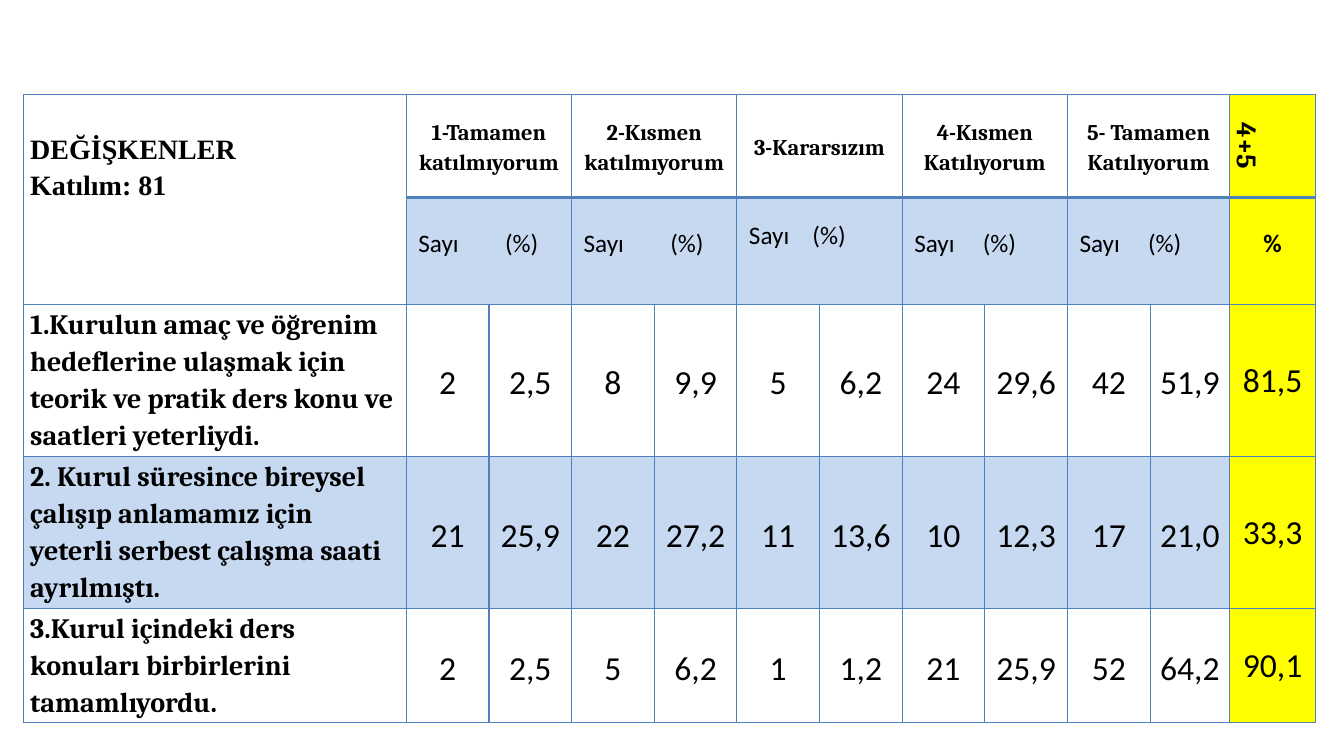
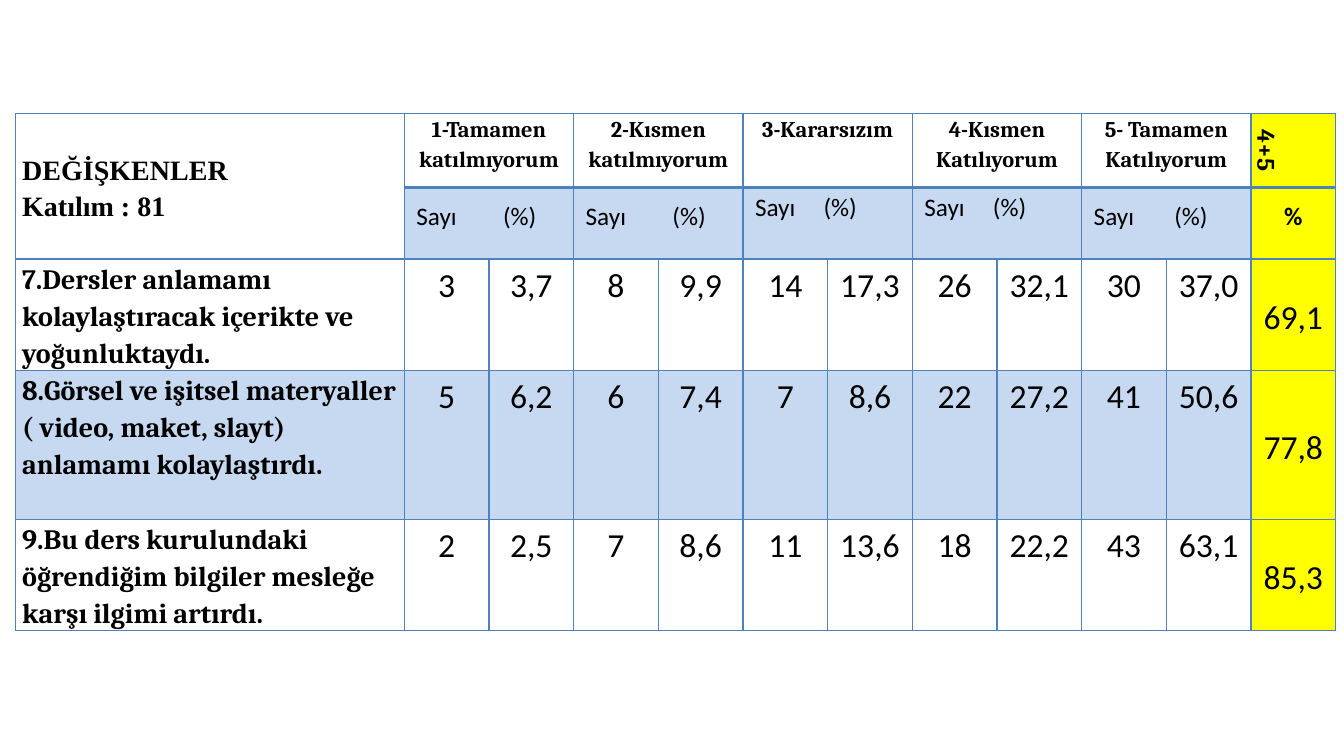
"""Build two survey result slides, each holding one table of answers."""
from lxml.etree import SubElement
from pptx import Presentation
from pptx.dml.color import RGBColor
from pptx.enum.text import MSO_ANCHOR, PP_ALIGN
from pptx.oxml import parse_xml
from pptx.oxml.ns import qn
from pptx.util import Inches, Pt

BLACK = RGBColor(0x00, 0x00, 0x00)
BORDER = RGBColor(0x4F, 0x81, 0xBD)
BAND = RGBColor(0xC6, 0xD9, 0xF1)
HIGHLIGHT = RGBColor(0xFF, 0xFF, 0x00)
NAMESPACE = "http://schemas.openxmlformats.org/drawingml/2006/main"
THIN, THICK = 1, 2.25
LOOSE = 1.15
SIDE = 0.07
TIGHT_MARGINS = (0.01, 0.01, 0.01, 0)

CHOICES = [
    "1-Tamamen katılmıyorum",
    "2-Kısmen katılmıyorum",
    "3-Kararsızım",
    "4-Kısmen Katılıyorum",
    "5- Tamamen Katılıyorum",
]
SURVEYS = [
    {
        "title": ["DEĞİŞKENLER", "Katılım: 81"],
        "title_anchor": MSO_ANCHOR.TOP, "title_top": 0.35,
        "left": 0.23, "top": 0.94,
        "columns": [3.8] + [0.82] * 9 + [0.79, 0.85],
        "rows": [1.02, 1.06, 1.51, 1.51, 1.13],
        "anchor": MSO_ANCHOR.MIDDLE, "sum_size": 20, "unit_size": 18, "unit_line": 12,
        "percent_tabs": [0.86, 0.86, 0.63, 0.68, 0.68], "raised": [2],
        "total_margins": TIGHT_MARGINS, "total_spacing": 1.0,
        "questions": [
            ("1.Kurulun amaç ve öğrenim hedeflerine ulaşmak için teorik ve pratik ders konu ve saatleri yeterliydi.",
             ["2", "2,5", "8", "9,9", "5", "6,2", "24", "29,6", "42", "51,9"], "81,5"),
            ("2. Kurul süresince bireysel çalışıp anlamamız için yeterli serbest çalışma saati ayrılmıştı.",
             ["21", "25,9", "22", "27,2", "11", "13,6", "10", "12,3", "17", "21,0"], "33,3"),
            ("3.Kurul içindeki ders konuları birbirlerini tamamlıyordu.",
             ["2", "2,5", "5", "6,2", "1", "1,2", "21", "25,9", "52", "64,2"], "90,1"),
        ],
    },
    {
        "title": ["DEĞİŞKENLER", "Katılım : 81"],
        "title_anchor": MSO_ANCHOR.MIDDLE, "title_top": 0,
        "left": 0.15, "top": 1.13,
        "columns": [3.86] + [0.84] * 11,
        "rows": [0.73, 0.71, 1.1, 1.48, 1.1],
        "anchor": MSO_ANCHOR.TOP, "sum_size": 18, "unit_size": 18, "unit_line": 13,
        "percent_tabs": [0.86, 0.86, 0.68, 0.68, 0.8], "raised": [2, 3],
        "total_margins": (SIDE, 0, SIDE, 0), "total_spacing": LOOSE,
        "questions": [
            ("7.Dersler anlamamı kolaylaştıracak içerikte ve yoğunluktaydı.",
             ["3", "3,7", "8", "9,9", "14", "17,3", "26", "32,1", "30", "37,0"], "69,1"),
            ("8.Görsel ve işitsel materyaller ( video, maket, slayt) anlamamı kolaylaştırdı.",
             ["5", "6,2", "6", "7,4", "7", "8,6", "22", "27,2", "41", "50,6"], "77,8"),
            ("9.Bu ders kurulundaki öğrendiğim bilgiler mesleğe karşı ilgimi artırdı.",
             ["2", "2,5", "7", "8,6", "11", "13,6", "18", "22,2", "43", "63,1"], "85,3"),
        ],
    },
]


def write_cell(cell, lines, size, font="Calibri", bold=False, align=PP_ALIGN.CENTER,
               anchor=MSO_ANCHOR.MIDDLE, spacing=LOOSE, margins=(SIDE, 0, SIDE, 0)):
    cell.vertical_anchor = anchor
    cell.margin_left, cell.margin_top, cell.margin_right, cell.margin_bottom = map(Inches, margins)
    frame = cell.text_frame
    for index, line in enumerate(lines):
        paragraph = frame.add_paragraph() if index else frame.paragraphs[0]
        paragraph.alignment = align
        paragraph.line_spacing = spacing
        run = paragraph.add_run()
        run.text = line
        run.font.size = Pt(size)
        run.font.name = font
        run.font.bold = bold
        run.font.color.rgb = BLACK


def set_tab(paragraph, position):
    tabs = SubElement(paragraph._p.get_or_add_pPr(), qn("a:tabLst"))
    SubElement(tabs, qn("a:tab"), pos=str(Inches(position)), algn="l")


def style_cell(cell, row, column, last_column):
    if column == last_column:
        fill_color = HIGHLIGHT
    elif row == 3 or (row == 1 and column):
        fill_color = BAND
    else:
        fill_color = None
    if fill_color is None:
        cell.fill.background()
    else:
        cell.fill.solid()
        cell.fill.fore_color.rgb = fill_color
    widths = {
        "L": THIN,
        "R": THIN,
        "T": THICK if row == 1 and column else THIN,
        "B": THICK if row == 0 and column else THIN,
    }
    properties = cell._tc.get_or_add_tcPr()
    for index, (edge, width) in enumerate(widths.items()):
        properties.insert(index, parse_xml(
            f'<a:ln{edge} xmlns:a="{NAMESPACE}" w="{Pt(width)}"><a:solidFill>'
            f'<a:srgbClr val="{BORDER}"/></a:solidFill></a:ln{edge}>'))


def fill_header(table, survey, last_column):
    table.cell(0, 0).merge(table.cell(1, 0))
    write_cell(table.cell(0, 0), survey["title"], 20, "Times New Roman", True, PP_ALIGN.LEFT,
               survey["title_anchor"], margins=(SIDE, survey["title_top"], SIDE, 0))
    unit_spacing = Pt(survey["unit_line"])
    for index, choice in enumerate(CHOICES):
        column = 1 + 2 * index
        for row in (0, 1):
            table.cell(row, column).merge(table.cell(row, column + 1))
        write_cell(table.cell(0, column), [choice], 16, "Cambria", True, anchor=survey["anchor"])
        bottom = survey["unit_line"] / 72 if index in survey["raised"] else 0
        unit_cell = table.cell(1, column)
        write_cell(unit_cell, ["Sayı\t(%)"], survey["unit_size"], align=PP_ALIGN.LEFT,
                   spacing=unit_spacing, margins=(0.12, 0, SIDE, bottom))
        set_tab(unit_cell.text_frame.paragraphs[0], survey["percent_tabs"][index])
    sum_cell = table.cell(0, last_column)
    write_cell(sum_cell, ["4+5"], survey["sum_size"], "Cambria", True, anchor=MSO_ANCHOR.TOP)
    sum_cell._tc.get_or_add_tcPr().set("vert", "vert")
    write_cell(table.cell(1, last_column), ["%"], survey["unit_size"], bold=True, spacing=unit_spacing)


def fill_answers(table, survey, last_column):
    for row, (question, answers, total) in enumerate(survey["questions"], start=2):
        write_cell(table.cell(row, 0), [question], 20, "Cambria", True, PP_ALIGN.LEFT, MSO_ANCHOR.TOP)
        for column, answer in enumerate(answers, start=1):
            write_cell(table.cell(row, column), [answer], 24, anchor=survey["anchor"])
        write_cell(table.cell(row, last_column), [total], 24,
                   spacing=survey["total_spacing"], margins=survey["total_margins"])


def add_survey(presentation, survey):
    slide = presentation.slides.add_slide(presentation.slide_layouts[6])
    columns, rows = survey["columns"], survey["rows"]
    table = slide.shapes.add_table(
        len(rows), len(columns), Inches(survey["left"]), Inches(survey["top"]),
        Inches(sum(columns)), Inches(sum(rows))).table
    table.first_row = table.horz_banding = False
    for column, width in zip(table.columns, columns):
        column.width = Inches(width)
    for row, height in zip(table.rows, rows):
        row.height = Inches(height)
    last_column = len(columns) - 1
    for row in range(len(rows)):
        for column in range(len(columns)):
            style_cell(table.cell(row, column), row, column, last_column)
    fill_header(table, survey, last_column)
    fill_answers(table, survey, last_column)


def main():
    presentation = Presentation()
    presentation.slide_width, presentation.slide_height = Inches(13.33), Inches(7.5)
    for survey in SURVEYS:
        add_survey(presentation, survey)
    presentation.save("out.pptx")


if __name__ == "__main__":
    main()
